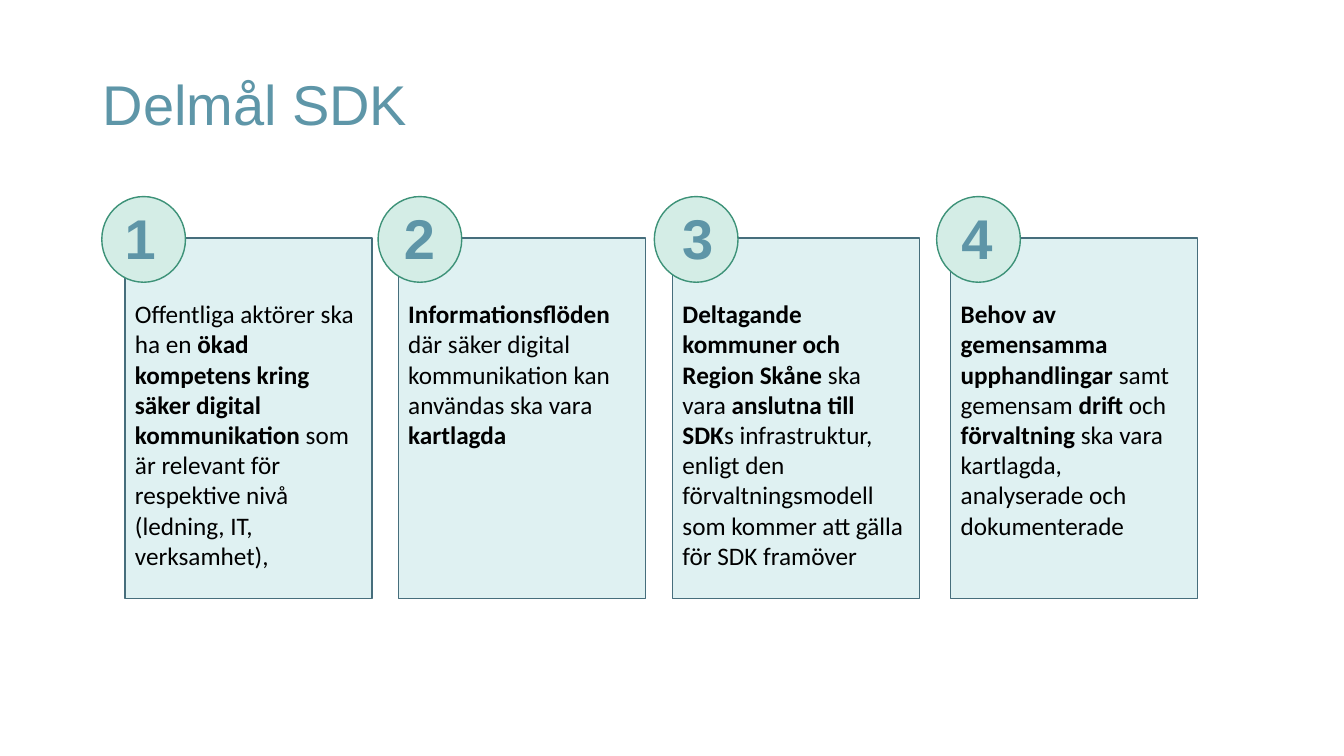
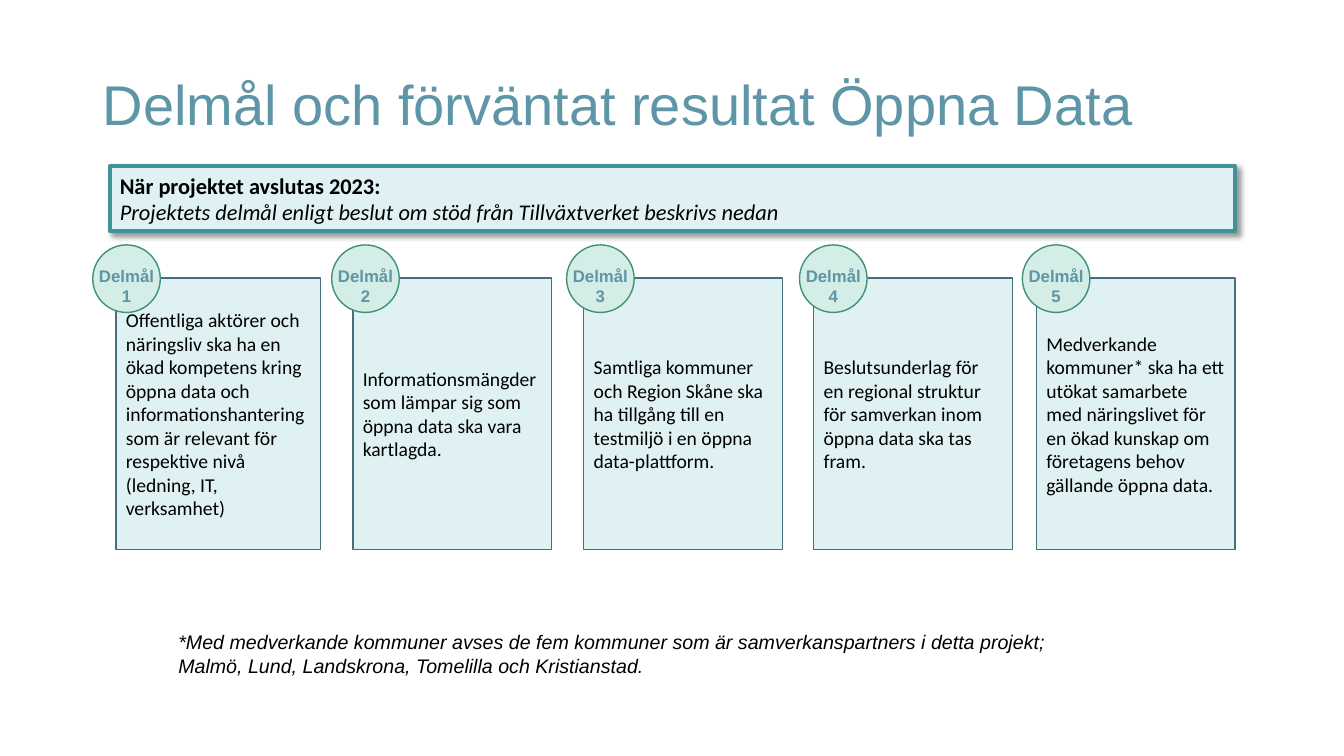
from lxml.etree import SubElement
from pptx import Presentation
from pptx.dml.color import RGBColor
from pptx.enum.shapes import MSO_SHAPE
from pptx.enum.text import MSO_ANCHOR, PP_ALIGN
from pptx.oxml.ns import qn
from pptx.util import Emu, Pt

PX = 9144
TITLE, NUMBER, INK = "5E96A8", "5E95A7", "000000"
CARD_FILL, CARD_LINE = "DFF1F2", "466E7C"
BADGE_FILL, BADGE_LINE = "D4EDE6", "3D9278"
BANNER_LINE = "3F9397"
HEAD, BODY = "Arial", "Calibri"

GOALS_SDK = [
    (124, 101, 90, "Offentliga aktörer ska ha en **ökad kompetens kring säker digital "
     "kommunikation** som är relevant för respektive nivå (ledning, IT, verksamhet),"),
    (395, 375, 367, "**Informationsflöden** där säker digital kommunikation kan användas "
     "ska vara **kartlagda**"),
    (667, 649, 643, "**Deltagande kommuner och Region Skåne **ska vara **anslutna till "
     "SDK**s infrastruktur, enligt den förvaltningsmodell som kommer att gälla för SDK "
     "framöver"),
    (943, 929, 920, "**Behov av gemensamma upphandlingar **samt gemensam **drift** och "
     "**förvaltning** ska vara kartlagda, analyserade och dokumenterade"),
]
GOALS_DATA = [
    (115, 203, 92, "Offentliga aktörer och näringsliv ska ha en ökad kompetens kring öppna "
     "data och informationshantering som är relevant för respektive nivå (ledning, IT, "
     "verksamhet)"),
    (350, 197, 329, "Informationsmängder som lämpar sig som öppna data ska vara kartlagda."),
    (579, 197, 562, "Samtliga kommuner och Region Skåne ska ha tillgång till en testmiljö i "
     "en öppna data-plattform."),
    (807, 197, 793, "Beslutsunderlag för en regional struktur för samverkan inom öppna data "
     "ska tas fram."),
    (1028, 197, 1014, "Medverkande kommuner* ska ha ett utökat samarbete med näringslivet "
     "för en ökad kunskap om företagens behov gällande öppna data."),
]


def rgb(color):
    """Turn a hex string into a colour."""
    return RGBColor.from_string(color)


def emu(box):
    """Turn a box in px into EMU lengths."""
    return [Emu(v * PX) for v in box]


def write(tf, text, size, font=BODY, color=INK, bold=False, italic=False,
          align=PP_ALIGN.LEFT):
    """Append text to the frame's paragraph; ** switches bold on and off."""
    p = tf.paragraphs[0]
    p.alignment = align
    for i, part in enumerate(text.split("**")):
        if part:
            r = p.add_run()
            r.text = part
            r.font.size, r.font.name = Pt(size), font
            r.font.bold, r.font.italic = bold or i % 2 == 1, italic
            r.font.color.rgb = rgb(color)
    return p


def add_text(s, box, text, size, anchor=MSO_ANCHOR.TOP, **fmt):
    """Add a wrapping text box."""
    tf = s.shapes.add_textbox(*emu(box)).text_frame
    tf.word_wrap = True
    tf.vertical_anchor = anchor
    return write(tf, text, size, **fmt)


def add_box(s, kind, box, fill, line, width=1):
    """Add a filled and outlined shape without shadow."""
    sp = s.shapes.add_shape(kind, *emu(box))
    sp.shadow.inherit = False
    sp.fill.solid()
    sp.fill.fore_color.rgb = rgb(fill)
    sp.line.color.rgb = rgb(line)
    sp.line.width = Pt(width)
    sp.text_frame.word_wrap = True
    sp.text_frame.vertical_anchor = MSO_ANCHOR.MIDDLE
    return sp


def add_shadow(sp):
    """Give a shape a soft shadow to the lower right."""
    effects = sp._element.spPr.find(qn("a:effectLst"))
    shadow = SubElement(effects, qn("a:outerShdw"), blurRad=str(Pt(4)), dist=str(Pt(3)),
                        dir="2700000", algn="tl", rotWithShape="0")
    black = SubElement(shadow, qn("a:srgbClr"), val=INK)
    SubElement(black, qn("a:alpha"), val="40000")


def add_card(s, box, text, size, top=None):
    """Add a goal card, with its text at a given top or centred."""
    tf = add_box(s, MSO_SHAPE.RECTANGLE, box, CARD_FILL, CARD_LINE).text_frame
    if top is not None:
        tf.vertical_anchor = MSO_ANCHOR.TOP
        tf.margin_top = Emu(top * PX)
    write(tf, text, size)


def add_badge(s, box, label_box, label, size):
    """Add a round badge and its label."""
    add_box(s, MSO_SHAPE.OVAL, box, BADGE_FILL, BADGE_LINE)
    add_text(s, label_box, label, size, font=HEAD, color=NUMBER, bold=True,
             align=PP_ALIGN.CENTER)


def add_banner(s, box, heading, text):
    """Add the shaded banner with a heading and a line of text."""
    sp = add_box(s, MSO_SHAPE.RECTANGLE, box, CARD_FILL, BANNER_LINE, 3)
    add_shadow(sp)
    write(sp.text_frame, heading, 16, bold=True).add_line_break()
    write(sp.text_frame, text, 16, italic=True)


def new_slide(prs, title):
    """Add a blank slide with its title."""
    s = prs.slides.add_slide(prs.slide_layouts[6])
    p = add_text(s, (92, 62, 1150, 89), title, 40, MSO_ANCHOR.MIDDLE, font=HEAD, color=TITLE)
    p.line_spacing = 0.9
    return s


def sdk_slide(prs):
    """Build the slide with four numbered goals."""
    s = new_slide(prs, "Delmål SDK")
    for n, (x, badge_x, label_x, text) in enumerate(GOALS_SDK, 1):
        add_card(s, (x, 236, 245, 358), text, 18, top=60)
        add_badge(s, (badge_x, 195, 83, 85), (label_x, 197, 98, 77), str(n), 40)


def data_slide(prs):
    """Build the slide with a banner, five goals and a footnote."""
    s = new_slide(prs, "Delmål och förväntat resultat Öppna Data")
    add_banner(s, (109, 165, 1116, 64), "När projektet avslutas 2023:",
               "Projektets delmål enligt beslut om stöd från Tillväxtverket beskrivs nedan")
    for n, (x, width, badge_x, text) in enumerate(GOALS_DATA, 1):
        add_card(s, (x, 276, width, 269), text, 14)
        add_badge(s, (badge_x, 243, 67, 67), (badge_x - 6, 259, 79, 50), f"Delmål {n}", 12)
    add_text(s, (167, 620, 936, 57),
             "*Med medverkande kommuner avses de fem kommuner som är samverkanspartners i "
             "detta projekt; Malmö, Lund, Landskrona, Tomelilla och Kristianstad.",
             14, font=HEAD, italic=True)


def main():
    """Build and save the presentation."""
    prs = Presentation()
    prs.slide_width, prs.slide_height = emu((1333, 750))
    sdk_slide(prs)
    data_slide(prs)
    prs.save("out.pptx")


if __name__ == "__main__":
    main()
